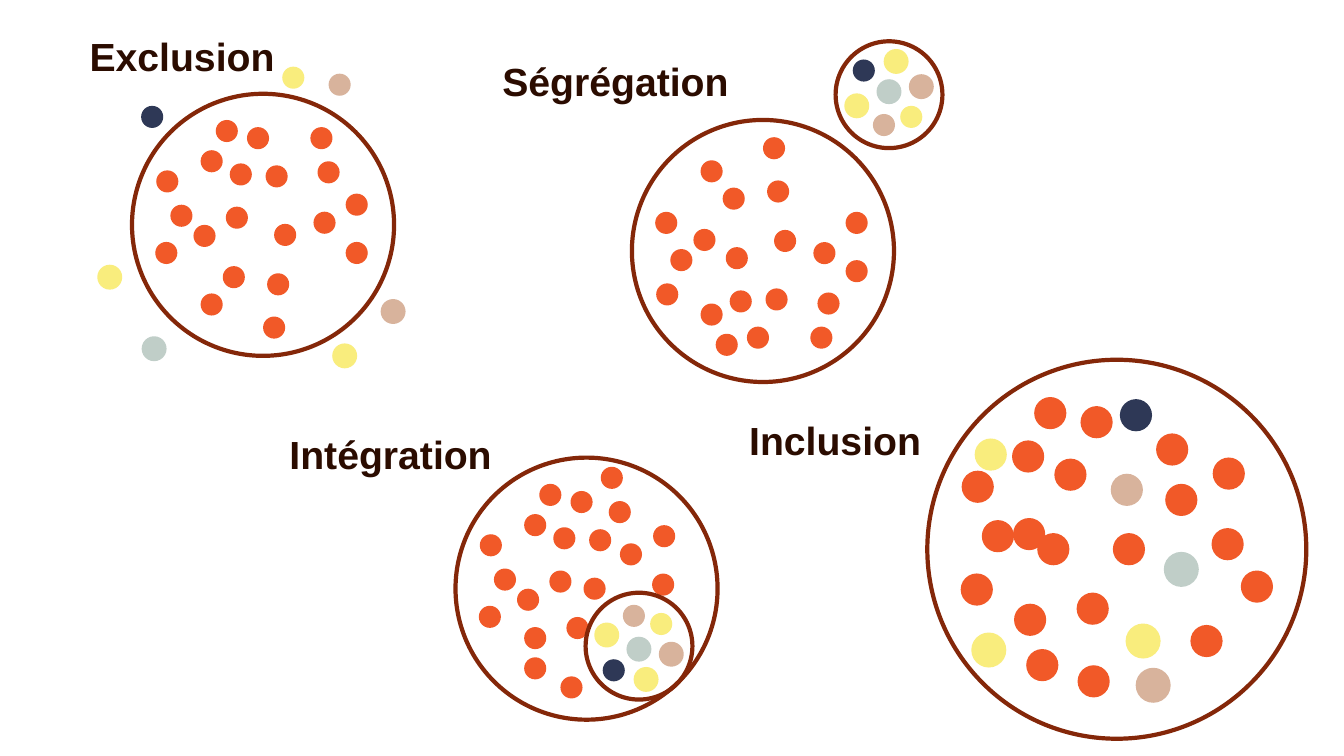
from pptx import Presentation
from pptx.enum.shapes import MSO_SHAPE
from pptx.enum.text import MSO_AUTO_SIZE, PP_ALIGN
from pptx.dml.color import RGBColor
from pptx.util import Pt

COLORS = {
    "title": "2B0C00",
    "ring": "842709",
    "orange": "F15928",
    "tan": "D8B39C",
    "yellow": "F9ED7D",
    "navy": "2E3856",
    "sage": "C0CEC8",
}

RING, SMALL_RING, LARGE_RING = 187.2, 76.3, 270.7
DOT, LARGE_DOT = 15.8, 23

MINORITY = [("tan", False), ("yellow", True), ("yellow", True), ("navy", False),
            ("sage", True), ("tan", True), ("yellow", False)]

COMMON = [(67, 80.6), (43.9, 93.6), (27.4, 79.2), (16.6, 105.8), (17.3, 54.7),
          (69.8, 49.7), (82.1, 23.8), (59.8, 18.7), (49, 40.3), (95.4, 51.1),
          (49, 142.6)]
FULL_CIRCLE = COMMON + [
    (152.6, 71.3), (127.4, 23.8), (93.6, 159.1), (96.5, 128.2), (64.8, 123.1),
    (101.5, 92.9), (132.5, 48.2), (129.6, 84.2), (152.6, 105.8)]
SHARED_CIRCLE = COMMON + [
    (141.1, 48.2), (103.7, 6.5), (74.9, 156.2), (79.2, 113.8), (49, 121),
    (91.4, 85.7), (109.4, 31), (117.4, 61.2), (140.4, 82.8)]
LARGE_CIRCLE = [
    (203.8, 69.8), (223.9, 150.5), (187.9, 189.4), (107.3, 218.2), (106.6, 166.3),
    (61.9, 174.2), (70.6, 206.6), (78.5, 123.8), (61.2, 113), (38.9, 114.5),
    (23.8, 152.6), (24.5, 79.2), (90.7, 70.6), (109.4, 33.1), (76.3, 26.6),
    (60.5, 57.6), (132.5, 123.8), (163.4, 52.6), (169.9, 88.6), (203, 120.2)]

OUTSIDE = [(140.4, -14.4), (144, 179.3), (-23.8, 123.1), (6.5, 8.6),
           (7.9, 174.2), (178.6, 147.6), (107.3, -19.4)]
ENCLOSED = [(26.6, 8.6), (35.3, 54), (7.2, 22.3), (12.2, 47.5),
            (30.2, 32.4), (53.3, 36), (46.1, 14.4)]
MIXED = [(131, 81.4), (142.6, 189.4), (32.4, 195.8), (137.5, 28.1),
         (169.9, 138.2), (149.8, 221), (33.8, 56.2)]


def rgb(name):
    return RGBColor.from_string(COLORS[name])


def flip(dots, ring):
    return [(x, ring - DOT - y) for x, y in dots]


def add_title(s, text, x, y):
    sp = s.shapes.add_textbox(Pt(x), Pt(y), Pt(183.6), Pt(41))
    tf = sp.text_frame
    tf.word_wrap = True
    tf.auto_size = MSO_AUTO_SIZE.SHAPE_TO_FIT_TEXT
    p = tf.paragraphs[0]
    p.text = text
    p.alignment = PP_ALIGN.CENTER
    p.font.name = "Arial"
    p.font.size = Pt(28)
    p.font.bold = True
    p.font.color.rgb = rgb("title")


def add_circle(group, x, y, size, fill=None, line=None, width=2):
    sp = group.shapes.add_shape(MSO_SHAPE.OVAL, Pt(x), Pt(y), Pt(size), Pt(size))
    sp.shadow.inherit = False
    if fill:
        sp.fill.solid()
        sp.fill.fore_color.rgb = rgb(fill)
    else:
        sp.fill.background()
    if line:
        sp.line.color.rgb = rgb(line)
        sp.line.width = Pt(width)
    else:
        sp.line.fill.background()


def add_ring(group, origin, size):
    add_circle(group, *origin, size, line="ring", width=3)


def add_majority(group, origin, dots, size=DOT):
    for x, y in dots:
        add_circle(group, origin[0] + x, origin[1] + y, size, "orange")


def add_minority(group, origin, dots, size=DOT):
    for (x, y), (color, outlined) in zip(dots, MINORITY):
        add_circle(group, origin[0] + x, origin[1] + y, size, color,
                   color if outlined else None)


def add_exclusion(s):
    add_title(s, "Exclusion", 38.2, 19.4)
    group, origin = s.shapes.add_group_shape(), (94.3, 67)
    add_ring(group, origin, RING)
    add_majority(group, origin, FULL_CIRCLE)
    add_minority(group, origin, OUTSIDE)


def add_two_rings(s, origin, majority, small_origin, minority):
    group = s.shapes.add_group_shape()
    add_ring(group, origin, RING)
    add_majority(group, origin, majority)
    add_minority(group, small_origin, minority)
    add_ring(group, small_origin, SMALL_RING)


def add_integration(s):
    add_title(s, "Intégration", 187.2, 303.8)
    add_two_rings(s, (325.4, 326.9), SHARED_CIRCLE, (418.3, 423.4), ENCLOSED)


def add_segregation(s):
    add_title(s, "Ségrégation", 347.8, 37.4)
    add_two_rings(s, (451.4, 85.7), flip(FULL_CIRCLE, RING),
                  (596.9, 29.5), flip(ENCLOSED, SMALL_RING))


def add_inclusion(s):
    add_title(s, "Inclusion", 504.7, 293.8)
    group, origin = s.shapes.add_group_shape(), (662.4, 257)
    add_ring(group, origin, LARGE_RING)
    add_minority(group, origin, MIXED, LARGE_DOT)
    add_majority(group, origin, LARGE_CIRCLE, LARGE_DOT)


def main():
    prs = Presentation()
    prs.slide_width, prs.slide_height = Pt(960), Pt(540)
    s = prs.slides.add_slide(prs.slide_layouts[6])
    add_exclusion(s)
    add_integration(s)
    add_segregation(s)
    add_inclusion(s)
    prs.save("out.pptx")


if __name__ == "__main__":
    main()
